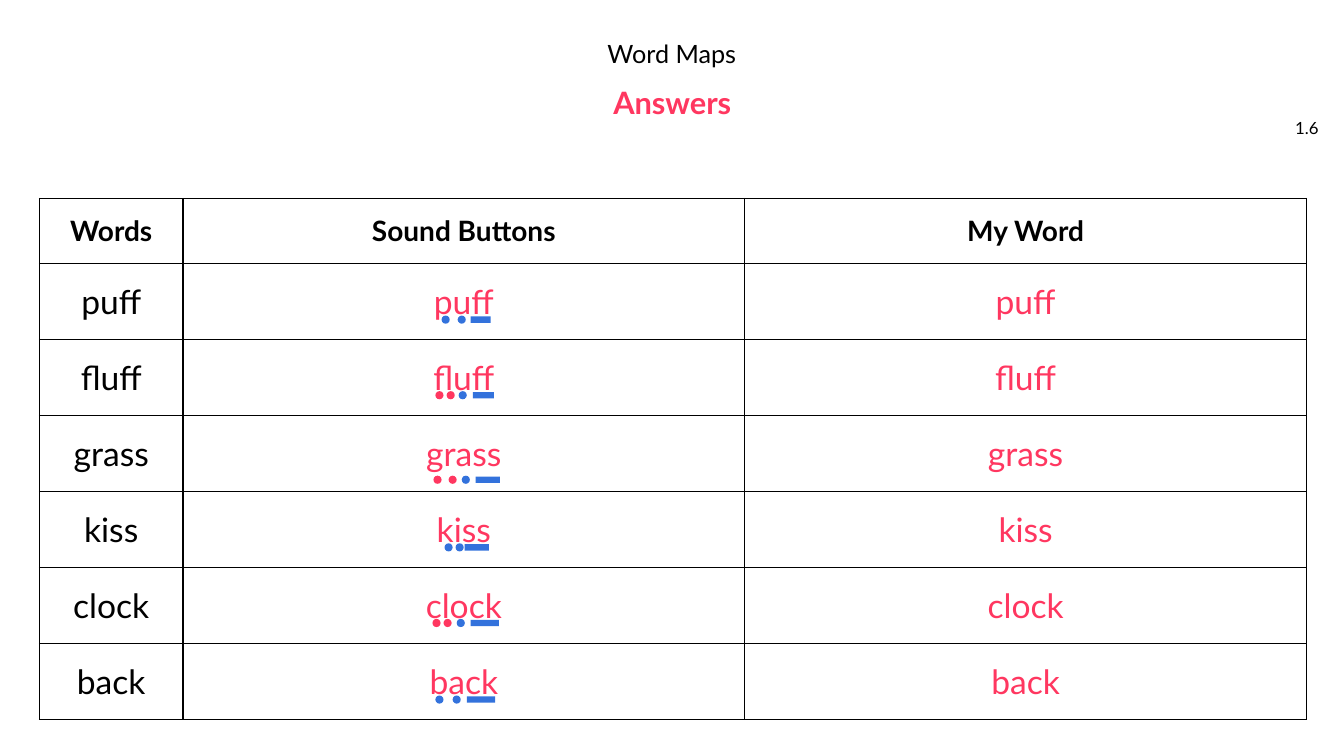
import dataclasses

import lxml.etree
import pptx
import pptx.dml.color
import pptx.enum.shapes
import pptx.enum.text
import pptx.oxml.ns
import pptx.util

Pt = pptx.util.Pt
ALIGN = pptx.enum.text.PP_ALIGN
SHAPE = pptx.enum.shapes.MSO_SHAPE
MIDDLE = pptx.enum.text.MSO_ANCHOR.MIDDLE

FONT = "Lato"
BLACK = "000000"
PINK = "FF3760"
BLUE = "3372DC"
DOT_SIZE = 5.8
BAR_HEIGHT = 4.5
HEADINGS = ("Words", "Sound Buttons", "My Word")
COLUMN_WIDTHS = (102.5, 401.3, 401.3)
HEADER_HEIGHT = 46.4
ROW_HEIGHT = 54.3


@dataclasses.dataclass(frozen=True)
class Label:
    text: str
    left: float
    top: float
    width: float
    height: float
    size: float
    color: str = BLACK
    bold: bool = False
    align: ALIGN = ALIGN.CENTER
    line_spacing: float = 0.9


@dataclasses.dataclass(frozen=True)
class WordMap:
    word: str
    button_top: float
    dot_lefts: tuple[float, ...]
    bar_left: float
    bar_width: float
    blend_count: int = 0


LABELS = (
    Label("1.6", 903.6, 77, 45.4, 28.8, 12, align=ALIGN.RIGHT, line_spacing=1),
    Label("Word Maps", 275, 26.6, 409.7, 25.2, 18),
    Label("Answers", 150.5, 60.5, 659.5, 28.8, 22, PINK, True),
)

WORD_MAPS = (
    WordMap("puff", 225.4, (315.4, 326.9), 336.2, 14.4),
    WordMap("fluff", 279.4, (311, 319, 327.6), 337.7, 15.1, 2),
    WordMap("grass", 339.8, (309.6, 320.4, 329.8), 339.8, 17.3, 2),
    WordMap("kiss", 388.1, (317.5, 325.4), 331.9, 17.3),
    WordMap("clock", 442.1, (308.9, 316.8, 326.2), 336.2, 20.2, 2),
    WordMap("back", 496.8, (311, 323.3), 333.4, 20.2),
)


def rgb(color: str) -> pptx.dml.color.RGBColor:
    return pptx.dml.color.RGBColor.from_string(color)


def style_paragraph(paragraph, size: float, color: str, bold: bool, align: ALIGN) -> None:
    paragraph.alignment = align
    paragraph.font.name = FONT
    paragraph.font.size = Pt(size)
    paragraph.font.bold = bold
    paragraph.font.color.rgb = rgb(color)


def add_label(slide, label: Label) -> None:
    box = slide.shapes.add_textbox(
        Pt(label.left), Pt(label.top), Pt(label.width), Pt(label.height)
    )
    frame = box.text_frame
    frame.word_wrap = True
    frame.vertical_anchor = MIDDLE
    frame.text = label.text
    paragraph = frame.paragraphs[0]
    paragraph.line_spacing = label.line_spacing
    style_paragraph(paragraph, label.size, label.color, label.bold, label.align)


def add_borders(cell) -> None:
    properties = cell._tc.get_or_add_tcPr()
    for index, side in enumerate(("a:lnL", "a:lnR", "a:lnT", "a:lnB")):
        line = lxml.etree.Element(pptx.oxml.ns.qn(side), w=str(Pt(1)))
        fill = lxml.etree.SubElement(line, pptx.oxml.ns.qn("a:solidFill"))
        lxml.etree.SubElement(fill, pptx.oxml.ns.qn("a:srgbClr"), val=BLACK)
        properties.insert(index, line)


def fill_cell(cell, text: str, size: float, color: str, bold: bool) -> None:
    cell.text = text
    cell.vertical_anchor = MIDDLE
    cell.fill.background()
    add_borders(cell)
    style_paragraph(cell.text_frame.paragraphs[0], size, color, bold, ALIGN.CENTER)


def add_word_table(slide) -> None:
    height = HEADER_HEIGHT + ROW_HEIGHT * len(WORD_MAPS)
    table = slide.shapes.add_table(
        len(WORD_MAPS) + 1, len(HEADINGS),
        Pt(28.2), Pt(141.8), Pt(sum(COLUMN_WIDTHS)), Pt(height),
    ).table
    for column, width in zip(table.columns, COLUMN_WIDTHS):
        column.width = Pt(width)
    for row in table.rows:
        row.height = Pt(ROW_HEIGHT)
    table.rows[0].height = Pt(HEADER_HEIGHT)
    for column_index, heading in enumerate(HEADINGS):
        fill_cell(table.cell(0, column_index), heading, 20, BLACK, True)
        color = PINK if column_index else BLACK
        for row_index, word_map in enumerate(WORD_MAPS, start=1):
            cell = table.cell(row_index, column_index)
            fill_cell(cell, word_map.word, 24, color, False)
            if column_index == 1:
                cell.margin_top = cell.margin_bottom = 0


def add_mark(group, kind: SHAPE, left: float, top: float,
             width: float, height: float, color: str) -> None:
    shape = group.shapes.add_shape(kind, Pt(left), Pt(top), Pt(width), Pt(height))
    shape.shadow.inherit = False
    shape.fill.solid()
    shape.fill.fore_color.rgb = rgb(color)
    shape.line.fill.background()


def add_sound_buttons(slide, word_map: WordMap) -> None:
    group = slide.shapes.add_group_shape()
    top = word_map.button_top
    for index, left in enumerate(word_map.dot_lefts):
        color = PINK if index < word_map.blend_count else BLUE
        add_mark(group, SHAPE.OVAL, left, top, DOT_SIZE, DOT_SIZE, color)
    bar_top = top + (DOT_SIZE - BAR_HEIGHT) / 2
    add_mark(group, SHAPE.RECTANGLE, word_map.bar_left, bar_top,
             word_map.bar_width, BAR_HEIGHT, BLUE)


def main() -> None:
    presentation = pptx.Presentation()
    presentation.slide_width = Pt(960)
    presentation.slide_height = Pt(540)
    slide = presentation.slides.add_slide(presentation.slide_layouts[6])
    for label in LABELS:
        add_label(slide, label)
    add_word_table(slide)
    for word_map in WORD_MAPS:
        add_sound_buttons(slide, word_map)
    presentation.save("out.pptx")


if __name__ == "__main__":
    main()
